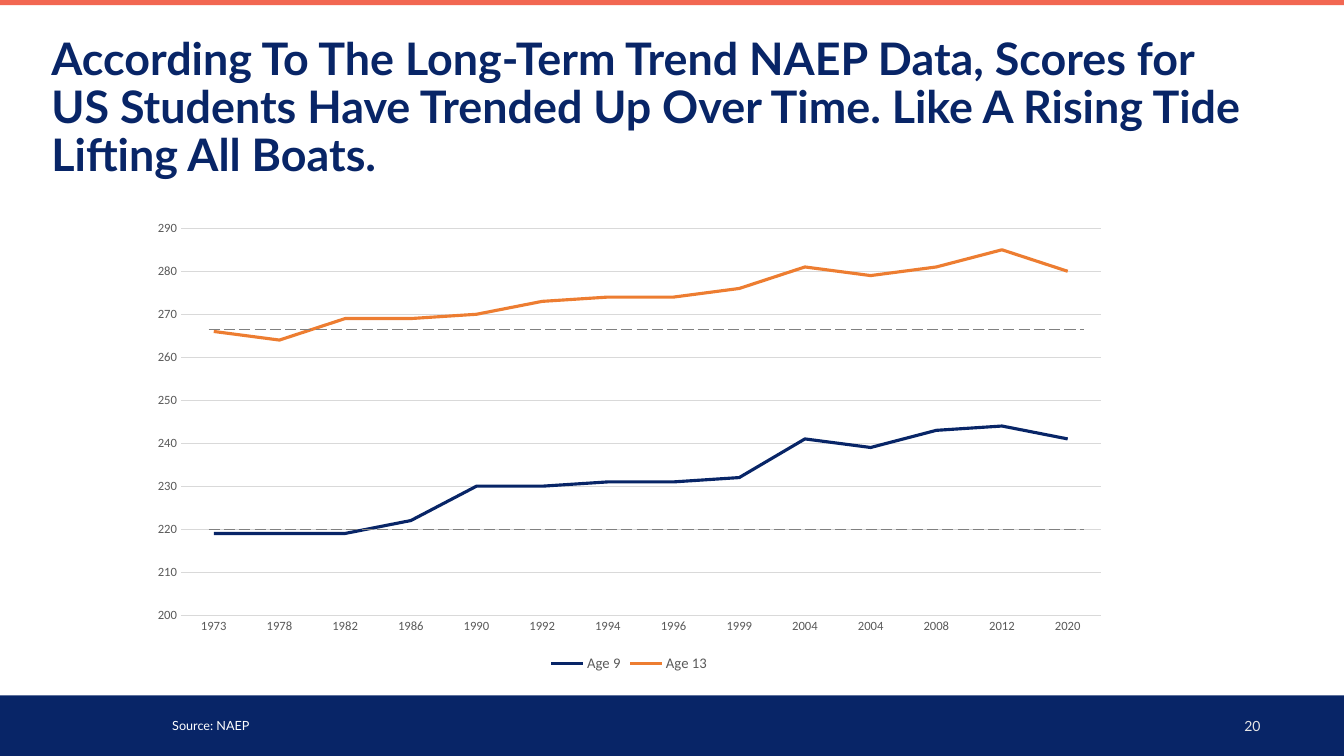
import pptx
import pptx.chart.data
import pptx.dml.color
import pptx.enum.chart
import pptx.enum.dml
import pptx.enum.shapes
import pptx.enum.text
import pptx.oxml
import pptx.oxml.ns
import pptx.util

Inches = pptx.util.Inches
Pt = pptx.util.Pt
RGBColor = pptx.dml.color.RGBColor
Anchor = pptx.enum.text.MSO_ANCHOR
Align = pptx.enum.text.PP_ALIGN

NAVY = RGBColor(0x08, 0x25, 0x67)
CORAL = RGBColor(0xF2, 0x67, 0x52)
ORANGE = RGBColor(0xED, 0x7D, 0x31)
WHITE = RGBColor(0xFF, 0xFF, 0xFF)
PALE = RGBColor(0xE7, 0xE6, 0xE6)
GRID_GRAY = RGBColor(0xD9, 0xD9, 0xD9)
DASH_GRAY = RGBColor(0x80, 0x80, 0x80)
LABEL_GRAY = RGBColor(0x59, 0x59, 0x59)

TITLE = ("According To The Long-Term Trend NAEP Data, Scores for US Students "
         "Have Trended Up Over Time. Like A Rising Tide Lifting All Boats.")
YEARS = ["1973", "1978", "1982", "1986", "1990", "1992", "1994",
         "1996", "1999", "2004", "2004", "2008", "2012", "2020"]
SCORES = [
    ("Age 9", NAVY, [219, 219, 219, 222, 230, 230, 231, 231, 232, 241, 239, 243, 244, 241]),
    ("Age 13", ORANGE, [266, 264, 269, 269, 270, 273, 274, 274, 276, 281, 279, 281, 285, 280]),
]
BANDS = [(6.9, 0.6, NAVY), (0, 0.05, CORAL)]  # top, height, colour
BASELINES = [3.27, 5.25]
FOOTER = [  # text, place, size, colour, alignment, anchor
    ("20", (11.64, 7, 0.96, 0.4), 10, PALE, Align.RIGHT, Anchor.MIDDLE),
    ("Source: NAEP", (1.61, 7.07, 3.23, 0.25), 9, WHITE, Align.LEFT, Anchor.TOP),
]


def style_font(font, name, size, color, bold=False):
    font.name = name
    font.size = Pt(size)
    font.bold = bold
    font.color.rgb = color


def style_line(line, color, width):
    line.color.rgb = color
    line.width = Pt(width)


def add_band(page, top, height, color):
    band = page.shapes.add_shape(pptx.enum.shapes.MSO_SHAPE.RECTANGLE,
                                 0, Inches(top), Inches(13.33), Inches(height))
    band.shadow.inherit = False
    band.fill.solid()
    band.fill.fore_color.rgb = color
    band.line.fill.background()


def add_title(page):
    title = page.shapes.title
    title.left, title.top, title.width, title.height = map(Inches, (0.41, 0.31, 12.21, 0.5))
    frame = title.text_frame
    frame.text = TITLE
    frame.word_wrap = True
    frame.auto_size = pptx.enum.text.MSO_AUTO_SIZE.NONE
    frame.vertical_anchor = Anchor.TOP
    para = frame.paragraphs[0]
    para.alignment = Align.LEFT
    para.line_spacing = 0.9
    para.space_after = Pt(6)
    style_font(para.font, "Lato", 32, NAVY, True)


def add_score_chart(page):
    data = pptx.chart.data.CategoryChartData()
    data.categories = YEARS
    for name, _, values in SCORES:
        data.add_series(name, values)
    chart = page.shapes.add_chart(pptx.enum.chart.XL_CHART_TYPE.LINE, Inches(1.37), Inches(2.1),
                                  Inches(9.74), Inches(4.61), data).chart
    style_font(chart.font, "Calibri", 10, LABEL_GRAY)
    chart.has_title = False
    chart.has_legend = True
    chart.legend.position = pptx.enum.chart.XL_LEGEND_POSITION.BOTTOM
    chart.legend.include_in_layout = False
    style_font(chart.legend.font, "Calibri", 10.5, LABEL_GRAY)

    for axis in (chart.category_axis, chart.value_axis):
        axis.major_tick_mark = axis.minor_tick_mark = pptx.enum.chart.XL_TICK_MARK.NONE
        style_font(axis.tick_labels.font, "Calibri", 9, LABEL_GRAY)
    style_line(chart.category_axis.format.line, GRID_GRAY, 0.75)
    scale = chart.value_axis
    scale.minimum_scale, scale.maximum_scale, scale.major_unit = 200, 290, 10
    scale.format.line.fill.background()
    style_line(scale.major_gridlines.format.line, GRID_GRAY, 0.75)

    plot = chart.plots[0]
    plot.vary_by_categories = False
    for series, (_, color, _) in zip(plot.series, SCORES):
        series.smooth = False
        series.marker.style = pptx.enum.chart.XL_MARKER_STYLE.NONE
        style_line(series.format.line, color, 2.25)


def add_baseline(page, height):
    baseline = page.shapes.add_connector(pptx.enum.shapes.MSO_CONNECTOR.STRAIGHT, Inches(2.07),
                                         Inches(height), Inches(10.75), Inches(height))
    style_line(baseline.line, DASH_GRAY, 1)
    baseline.line.dash_style = pptx.enum.dml.MSO_LINE.LONG_DASH
    properties = baseline._element.spPr
    properties.append(pptx.oxml.parse_xml(f"<a:effectLst {pptx.oxml.ns.nsdecls('a')}/>"))


def add_footer_text(page, text, place, size, color, alignment, anchor):
    box = page.shapes.add_textbox(*map(Inches, place))
    frame = box.text_frame
    frame.word_wrap = True
    frame.vertical_anchor = anchor
    frame.text = text
    para = frame.paragraphs[0]
    para.alignment = alignment
    style_font(para.font, "Lato", size, color)


def main():
    deck = pptx.Presentation()
    deck.slide_width, deck.slide_height = Inches(13.33), Inches(7.5)
    page = deck.slides.add_slide(deck.slide_layouts[5])
    for band in BANDS:
        add_band(page, *band)
    add_title(page)
    add_score_chart(page)
    for height in BASELINES:
        add_baseline(page, height)
    for entry in FOOTER:
        add_footer_text(page, *entry)
    deck.save("out.pptx")


if __name__ == "__main__":
    main()
